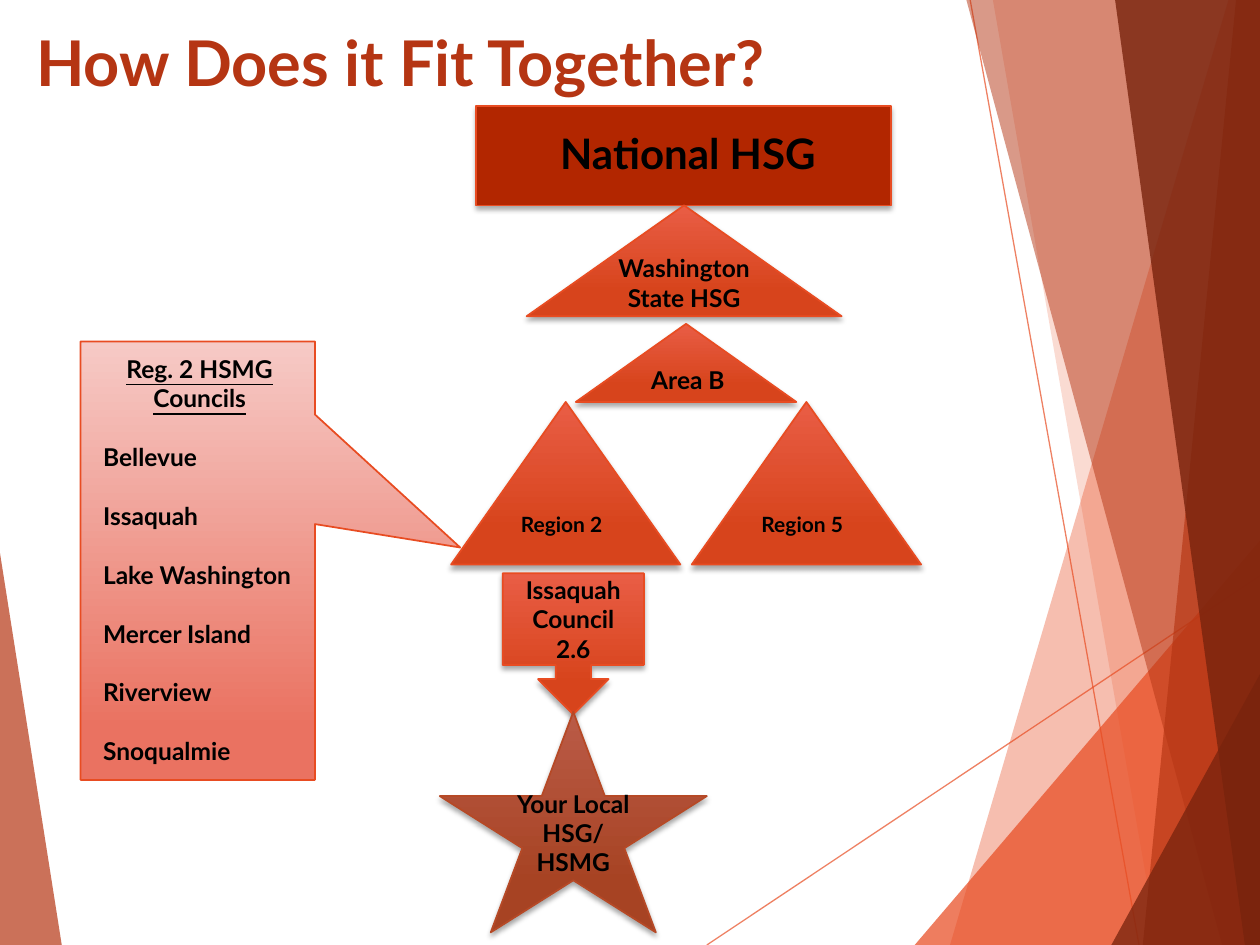
import pptx
import pptx.util
import pptx.dml.color
import pptx.enum.shapes
import pptx.enum.text
import pptx.oxml
import pptx.oxml.ns

SHAPE = pptx.enum.shapes.MSO_SHAPE
ALIGN = pptx.enum.text.PP_ALIGN
COLUMNS, ROWS = 100, 75
CELL = pptx.util.Inches(0.1)
NAMESPACE = pptx.oxml.ns.nsdecls("a")
ORANGE, RUST, MAROON = "E84C22", "B53513", "78230D"
BLOCK = ("E95D45", "D7441C")


def paint(fill, *colours, stop=100, alpha=100):
    if len(colours) == 2:
        fill.gradient()
        fill.gradient_angle = 270
        for gradient_stop, colour, position in zip(fill.gradient_stops, colours, (0, stop)):
            gradient_stop.color.rgb = pptx.dml.color.RGBColor.from_string(colour)
            gradient_stop.position = position / 100
    else:
        fill.solid()
        fill.fore_color.rgb = pptx.dml.color.RGBColor.from_string(colours[0])
    if alpha < 100:
        for colour in fill._xPr.iter(pptx.oxml.ns.qn("a:srgbClr")):
            colour.append(pptx.oxml.parse_xml(f'<a:alpha {NAMESPACE} val="{alpha * 1000}"/>'))


def write(frame, text, size=14, colour="000000", align=ALIGN.CENTER, underline=False, gap=0):
    paragraph = frame.add_paragraph() if frame.text else frame.paragraphs[0]
    paragraph.alignment = align
    paragraph.space_before = pptx.util.Pt(gap)
    run = paragraph.add_run()
    run.text = text
    run.font.name = "Lato"
    run.font.size = pptx.util.Pt(size)
    run.font.bold = True
    run.font.underline = underline
    paint(run.font.fill, colour)


presentation = pptx.Presentation()
presentation.slide_width = COLUMNS * CELL
presentation.slide_height = ROWS * CELL
slide = presentation.slides.add_slide(presentation.slide_layouts[6])
shapes = slide.shapes

for ray in [(56.1, ROWS, COLUMNS, 45.7), (77, 0, 90.4, ROWS)]:
    connector = shapes.add_connector(
        pptx.enum.shapes.MSO_CONNECTOR.STRAIGHT, *[int(place * CELL) for place in ray]
    )
    paint(connector.line.fill, ORANGE, alpha=70)
    connector.line.width = pptx.util.Pt(0.75)
    connector._element.spPr.append(pptx.oxml.parse_xml(f"<a:effectLst {NAMESPACE}/>"))

facets = [
    (ORANGE, 36, [(97.5, 0), (75.4, ROWS), (COLUMNS, ROWS), (COLUMNS, 0)]),
    (ORANGE, 20, [(78.8, 0), (91.9, ROWS), (COLUMNS, ROWS), (COLUMNS, 0)]),
    (ORANGE, 72, [(72.6, ROWS), (COLUMNS, 42.9), (COLUMNS, ROWS)]),
    (RUST, 50, [(76.7, 0), (97, ROWS), (COLUMNS, ROWS), (COLUMNS, 0)]),
    (RUST, 66, [(98.1, 0), (90.7, ROWS), (COLUMNS, ROWS), (COLUMNS, 0)]),
    (MAROON, 80, [(88.5, 0), (98.8, ROWS), (COLUMNS, ROWS), (COLUMNS, 0)]),
    (MAROON, 76, [(88.2, ROWS), (COLUMNS, 53.5), (COLUMNS, ROWS)]),
    (RUST, 70, [(0, 43.9), (4.9, ROWS), (0, ROWS)]),
]
for colour, alpha, corners in facets:
    points = [(int(x * CELL), int(y * CELL)) for x, y in corners]
    outline = shapes.build_freeform(*points[0])
    outline.add_line_segments(points[1:], close=True)
    facet = outline.convert_to_shape()
    paint(facet.fill, colour, alpha=alpha)
    facet.line.fill.background()
    facet.shadow.inherit = False

levels = [
    (SHAPE.RECTANGLE, (37.8, 8.4, 32.9, 7.9), ("B22600",), "", {}),
    (SHAPE.ISOSCELES_TRIANGLE, (41.8, 16.3, 25, 8.8), BLOCK, "", {}),
    (SHAPE.ISOSCELES_TRIANGLE, (45.7, 25.7, 17.5, 6.2), BLOCK, "", {}),
    (SHAPE.ISOSCELES_TRIANGLE, (35.8, 31.9, 18.2, 12.9), BLOCK, "Region 2",
     {"size": 12, "align": ALIGN.LEFT}),
    (SHAPE.ISOSCELES_TRIANGLE, (54.9, 31.9, 18.2, 12.9), BLOCK, "Region 5",
     {"size": 12, "align": ALIGN.LEFT}),
    (SHAPE.DOWN_ARROW_CALLOUT, (39.9, 45.5, 11.2, 11.2), BLOCK, "Issaquah Council 2.6", {}),
    (SHAPE.STAR_5_POINT, (34.9, 56.5, 21.2, 17.5), ("BA5B47", "A74323"), "", {}),
    (SHAPE.RECTANGULAR_CALLOUT, (6.4, 27.1, 18.6, 34.8), ("F6CAC6", "EA7261"), "", {}),
]
for kind, place, colours, text, text_format in levels:
    level = shapes.add_shape(kind, *[int(length * CELL) for length in place])
    is_callout = kind == SHAPE.RECTANGULAR_CALLOUT
    paint(level.fill, *colours, stop=88 if is_callout else 78)
    paint(level.line.fill, "B64926" if kind == SHAPE.STAR_5_POINT else ORANGE)
    level.line.width = pptx.util.Pt(1)
    level.shadow.inherit = False
    if is_callout:
        level.adjustments[0], level.adjustments[1] = 1.12, -0.03
    else:
        level._element.spPr.find(pptx.oxml.ns.qn("a:effectLst")).append(pptx.oxml.parse_xml(
            f'<a:outerShdw {NAMESPACE} blurRad="38100" dist="25400" dir="5400000" rotWithShape="0">'
            '<a:srgbClr val="000000"><a:alpha val="35000"/></a:srgbClr></a:outerShdw>'
        ))
    if text:
        write(level.text_frame, text, **text_format)

council_name = {"align": ALIGN.LEFT, "gap": 16.8}
councils = ["Bellevue", "Issaquah", "Lake Washington", "Mercer Island", "Riverview", "Snoqualmie"]
labels = [
    ((42.8, 9.6, 23.6, 3.8), [("National HSG", {"size": 24})]),
    ((46.8, 19.6, 15, 5), [("Washington State HSG", {})]),
    ((50.7, 28.5, 8.7, 3.8), [("Area B", {"align": ALIGN.LEFT})]),
    ((39.9, 62.1, 11.2, 5), [("Your Local", {}), ("HSG/HSMG", {})]),
    ((7.2, 27.6, 17.3, 29.3), [("Reg. 2 HSMG Councils", {"underline": True})]
     + [(council, council_name) for council in councils]),
    ((1.9, 1.4, 62.5, 7.1), [("How Does it Fit Together?",
                              {"size": 36, "colour": RUST, "align": ALIGN.LEFT})]),
]
for place, lines in labels:
    label = shapes.add_textbox(*[int(length * CELL) for length in place])
    label.text_frame.word_wrap = True
    for text, text_format in lines:
        write(label.text_frame, text, **text_format)

presentation.save("out.pptx")
